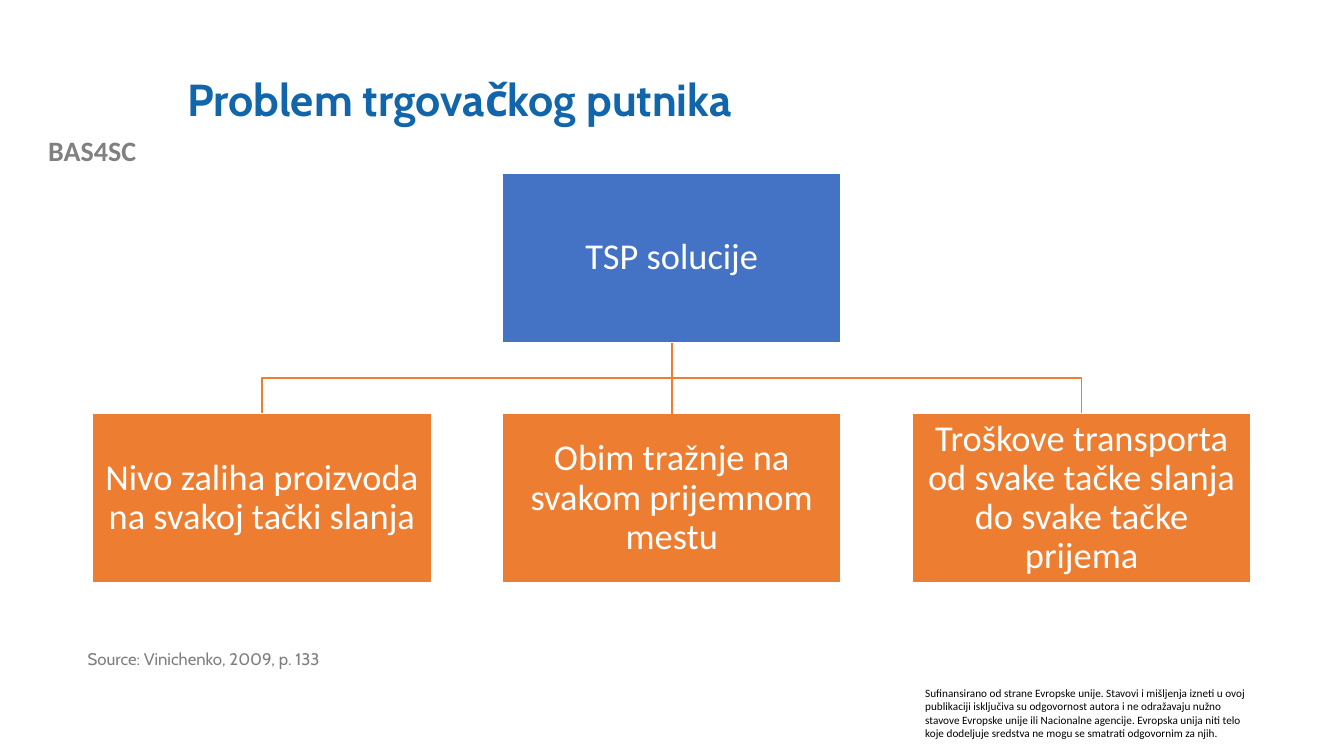
"""Build the travelling salesman problem slide with its solution hierarchy."""
from dataclasses import dataclass

from lxml.etree import SubElement
from pptx import Presentation
from pptx.dml.color import RGBColor
from pptx.enum.shapes import MSO_CONNECTOR, MSO_SHAPE
from pptx.enum.text import MSO_ANCHOR, PP_ALIGN
from pptx.oxml.ns import qn
from pptx.shapes.autoshape import Shape
from pptx.shapes.connector import Connector
from pptx.slide import Slide
from pptx.util import Pt

WHITE = RGBColor(0xFF, 0xFF, 0xFF)
BLACK = RGBColor(0x00, 0x00, 0x00)
BLUE = RGBColor(0x44, 0x72, 0xC4)
ORANGE = RGBColor(0xED, 0x7D, 0x31)
TITLE_BLUE = RGBColor(0x10, 0x65, 0xAB)
LABEL_GRAY = RGBColor(0x80, 0x80, 0x80)
SOURCE_GRAY = RGBColor(0x7F, 0x7F, 0x7F)

NODE_WIDTH, NODE_HEIGHT = 241.92, 120.96
NODE_LEFT, NODE_STEP = 66.24, 292.75
ROOT_TOP, CHILD_TOP = 123.84, 295.4
NODE_INSET = 1.3


@dataclass(frozen=True)
class Label:
    """A text box with its place in points and its text format."""

    text: str
    left: float
    top: float
    width: float
    height: float
    size: float
    font: str
    color: RGBColor
    bold: bool = False
    align: PP_ALIGN = PP_ALIGN.LEFT
    anchor: MSO_ANCHOR = MSO_ANCHOR.TOP
    spacing: float = 1.0


@dataclass(frozen=True)
class Node:
    """A rectangle of the hierarchy, placed by its column."""

    text: str
    column: int
    top: float
    color: RGBColor

    @property
    def left(self) -> float:
        """Return the left edge in points."""
        return NODE_LEFT + self.column * NODE_STEP

    @property
    def center(self) -> float:
        """Return the horizontal middle in points."""
        return self.left + NODE_WIDTH / 2


LABELS = (
    Label("BAS4SC", 0, 92.16, 131.76, 31.68, 20, "Calibri", LABEL_GRAY,
          bold=True, align=PP_ALIGN.CENTER),
    Label("Sufinansirano od strane Evropske unije. Stavovi i mišljenja izneti u ovoj "
          "publikaciji isključiva su odgovornost autora i ne odražavaju nužno stavove "
          "Evropske unije ili Nacionalne agencije. Evropska unija niti telo koje "
          "dodeljuje sredstva ne mogu se smatrati odgovornim za njih.",
          653.76, 486.72, 246.24, 46.08, 8, "Calibri", BLACK),
    Label("Source: Vinichenko, 2009, p. 133", 55.44, 461.52, 360.72, 37.44, 12,
          "Cabin", SOURCE_GRAY, spacing=0.9),
    Label("Problem trgovačkog putnika", 126.72, 28.8, 833.04, 87.84, 32, "Cabin",
          TITLE_BLUE, bold=True, anchor=MSO_ANCHOR.MIDDLE, spacing=0.9),
)
ROOT = Node("TSP solucije", 1, ROOT_TOP, BLUE)
CHILDREN = tuple(
    Node(text, column, CHILD_TOP, ORANGE)
    for column, text in enumerate((
        "Nivo zaliha proizvoda na svakoj tački slanja",
        "Obim tražnje na svakom prijemnom mestu",
        "Troškove transporta od svake tačke slanja do svake tačke prijema",
    ))
)


def apply_format(target: object, values: dict[str, object]) -> None:
    """Set every named format value on the target."""
    for name, value in values.items():
        setattr(target, name, value)


def write_text(box: Shape, label: Label) -> None:
    """Write the label's text into a shape."""
    frame = box.text_frame
    apply_format(frame, {"word_wrap": True, "vertical_anchor": label.anchor})
    para = frame.paragraphs[0]
    apply_format(para, {"alignment": label.align, "line_spacing": label.spacing})
    span = para.add_run()
    span.text = label.text
    apply_format(span.font, {"name": label.font, "size": Pt(label.size), "bold": label.bold})
    span.font.color.rgb = label.color


def add_label(page: Slide, label: Label) -> None:
    """Add a free text box."""
    box = page.shapes.add_textbox(
        Pt(label.left), Pt(label.top), Pt(label.width), Pt(label.height))
    write_text(box, label)


def add_node(page: Slide, node: Node) -> Shape:
    """Add a filled rectangle with centred text."""
    box = page.shapes.add_shape(
        MSO_SHAPE.RECTANGLE, Pt(node.left), Pt(node.top), Pt(NODE_WIDTH), Pt(NODE_HEIGHT))
    box.shadow.inherit = False
    box.fill.solid()
    box.fill.fore_color.rgb = node.color
    style_line(box, WHITE)
    sides = ("left", "top", "right", "bottom")
    apply_format(box.text_frame, {f"margin_{side}": Pt(NODE_INSET) for side in sides})
    write_text(box, Label(
        node.text, node.left, node.top, NODE_WIDTH, NODE_HEIGHT, 26, "Calibri", WHITE,
        align=PP_ALIGN.CENTER, anchor=MSO_ANCHOR.MIDDLE, spacing=0.9))
    return box


def style_line(item: Shape | Connector, color: RGBColor) -> None:
    """Give a shape or connector a one-point line."""
    item.line.color.rgb = color
    item.line.width = Pt(1)


def add_branch(page: Slide, parent: Node, child: Node) -> None:
    """Draw a right-angled branch from parent to child."""
    start = parent.top + NODE_HEIGHT
    middle = (start + child.top) / 2
    corners = ((parent.center, middle), (child.center, middle), (child.center, child.top))
    builder = page.shapes.build_freeform(Pt(parent.center), Pt(start))
    builder.add_line_segments([(Pt(x), Pt(y)) for x, y in corners], close=False)
    branch = builder.convert_to_shape()
    branch.shadow.inherit = False
    branch.fill.background()
    style_line(branch, ORANGE)


def add_trunk(page: Slide, parent: Shape, child: Shape) -> None:
    """Join the parent to the child straight below it."""
    trunk = page.shapes.add_connector(MSO_CONNECTOR.STRAIGHT, Pt(0), Pt(0), Pt(0), Pt(0))
    trunk.begin_connect(parent, 2)
    trunk.end_connect(child, 0)
    style_line(trunk, ORANGE)
    SubElement(trunk.element.spPr, qn("a:effectLst"))


def main() -> None:
    """Build and save the deck."""
    deck = Presentation()
    apply_format(deck, {"slide_width": Pt(960), "slide_height": Pt(540)})
    page = deck.slides.add_slide(deck.slide_layouts[6])
    for label in LABELS:
        add_label(page, label)
    for child in CHILDREN:
        if child.column != ROOT.column:
            add_branch(page, ROOT, child)
    root_box = add_node(page, ROOT)
    child_boxes = [add_node(page, child) for child in CHILDREN]
    add_trunk(page, root_box, child_boxes[ROOT.column])
    deck.save("out.pptx")


if __name__ == "__main__":
    main()
